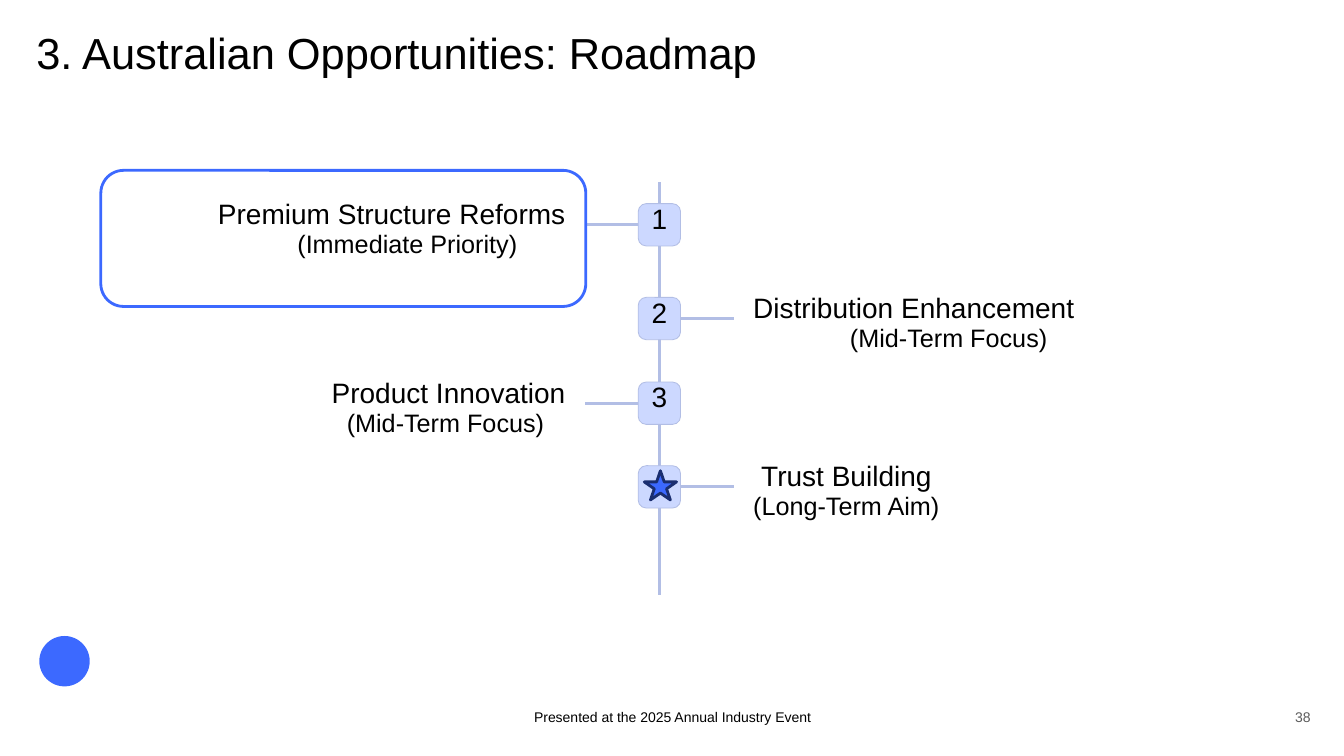
from dataclasses import dataclass

from lxml import etree
from pptx import Presentation
from pptx.dml.color import RGBColor
from pptx.enum.shapes import MSO_CONNECTOR, MSO_SHAPE
from pptx.enum.text import MSO_ANCHOR, PP_ALIGN
from pptx.oxml.ns import qn
from pptx.util import Inches, Pt

STRAIGHT = MSO_CONNECTOR.STRAIGHT
OVAL, STAR = MSO_SHAPE.OVAL, MSO_SHAPE.STAR_5_POINT
ROUNDED = MSO_SHAPE.ROUNDED_RECTANGLE
TOP, BOTTOM = MSO_ANCHOR.TOP, MSO_ANCHOR.BOTTOM
LEFT, CENTER, RIGHT = PP_ALIGN.LEFT, PP_ALIGN.CENTER, PP_ALIGN.RIGHT

FONT = "Arial"
BLACK, GREY = "000000", "5B5B5B"
BLUE, NAVY = "3C69FF", "1A2E70"
PALE, RULE = "CCD8FF", "B2BEE5"

SPINE_X = 6.54
BADGE = 0.42
STUB_REACH = 0.74
LABEL_REACH = 0.93
LABEL_WIDTH = 4.0
LEFT_SITE, RIGHT_SITE = 1, 3


@dataclass(frozen=True)
class Stage:
    number: str
    top: float
    on_left: bool
    name: str
    horizon: str
    name_indent: float
    horizon_indent: float


STAGES = (
    Stage("1", 2.02, True, "Premium Structure Reforms", "(Immediate Priority)", 0, 1.34),
    Stage("2", 2.95, False, "Distribution Enhancement", "(Mid-Term Focus)", 0, 0.96),
    Stage("3", 3.79, True, "Product Innovation", "(Mid-Term Focus)", 0, 1.83),
    Stage("", 4.62, False, "Trust Building", "(Long-Term Aim)", 0.08, 0),
)


def color(value: str) -> RGBColor:
    return RGBColor.from_string(value)


def format_paragraph(para, size, align=LEFT, spacing=None, indent=0.0, font_color=BLACK):
    para.alignment = align
    if spacing is not None:
        para.line_spacing = spacing
    if indent:
        para._p.get_or_add_pPr().set("marL", str(Inches(indent)))
    for span in para.runs:
        span.font.name = FONT
        span.font.size = Pt(size)
        span.font.color.rgb = color(font_color)


def clear_margins(frame, top: float = 0.0):
    frame.margin_left = frame.margin_right = frame.margin_bottom = 0
    frame.margin_top = Inches(top)


def add_text(page, left, top, width, height, text, anchor=TOP):
    box = page.shapes.add_textbox(Inches(left), Inches(top), Inches(width), Inches(height))
    frame = box.text_frame
    frame.word_wrap = True
    frame.vertical_anchor = anchor
    clear_margins(frame)
    frame.text = text
    return frame.paragraphs


def add_figure(page, kind, left, top, width, height, fill=None, line=None, weight=1.0):
    """Add a preset shape; a missing fill or line colour leaves that part empty."""
    shape = page.shapes.add_shape(kind, Inches(left), Inches(top), Inches(width), Inches(height))
    shape.shadow.inherit = False
    if fill:
        shape.fill.solid()
        shape.fill.fore_color.rgb = color(fill)
    else:
        shape.fill.background()
    if line:
        shape.line.color.rgb = color(line)
        shape.line.width = Pt(weight)
    else:
        shape.line.fill.background()
    return shape


def add_rule(page, x1: float, y1: float, x2: float, y2: float):
    rule = page.shapes.add_connector(STRAIGHT, Inches(x1), Inches(y1), Inches(x2), Inches(y2))
    rule.line.color.rgb = color(RULE)
    rule.line.width = Pt(2)
    etree.SubElement(rule._element.spPr, qn("a:effectLst"))
    return rule


def add_stage(page, stage: Stage):
    """Add the numbered badge, its stub line and its two-line label."""
    side = -1 if stage.on_left else 1
    badge = add_figure(page, ROUNDED, SPINE_X - BADGE / 2, stage.top, BADGE, BADGE, PALE, RULE, 0.6)
    badge.adjustments[0] = 0.19
    frame = badge.text_frame
    clear_margins(frame, top=0.01)
    frame.vertical_anchor = TOP
    frame.text = stage.number
    format_paragraph(frame.paragraphs[0], 20, CENTER, Pt(20))

    middle = stage.top + BADGE / 2
    stub = add_rule(page, SPINE_X + side * BADGE / 2, middle, SPINE_X + side * STUB_REACH, middle)
    stub.begin_connect(badge, LEFT_SITE if stage.on_left else RIGHT_SITE)

    near_edge = SPINE_X + side * LABEL_REACH
    label_left = near_edge - LABEL_WIDTH if stage.on_left else near_edge
    name, horizon = add_text(page, label_left, stage.top - 0.02, LABEL_WIDTH, 0.6,
                             f"{stage.name}\n{stage.horizon}")
    name_align = RIGHT if stage.on_left else LEFT
    format_paragraph(name, 20, name_align, Pt(20.5), stage.name_indent)
    format_paragraph(horizon, 18, LEFT, Pt(20.5), stage.horizon_indent)


def main():
    deck = Presentation()
    deck.slide_width, deck.slide_height = Inches(13.33), Inches(7.5)
    page = deck.slides.add_slide(deck.slide_layouts[6])

    add_figure(page, OVAL, 0.39, 6.31, 0.5, 0.5, BLUE)
    title = add_text(page, 0.36, 0.32, 12.18, 1.09, "3. Australian Opportunities: Roadmap")
    format_paragraph(title[0], 31, spacing=0.9)
    page_number = add_text(page, 12.54, 7, 0.46, 0.2, "38", BOTTOM)
    format_paragraph(page_number[0], 10, RIGHT, font_color=GREY)
    footer = add_text(page, 4.42, 7, 4.5, 0.2,
                      "Presented at the 2025 Annual Industry Event", BOTTOM)
    format_paragraph(footer[0], 10, CENTER)

    add_rule(page, SPINE_X, 1.81, SPINE_X, 5.9)
    for stage in STAGES:
        add_stage(page, stage)
    add_figure(page, ROUNDED, 1, 1.69, 4.81, 1.35, line=BLUE, weight=2)
    add_figure(page, STAR, 6.39, 4.67, 0.32, 0.29, BLUE, NAVY, 2)

    deck.save("out.pptx")


if __name__ == "__main__":
    main()
